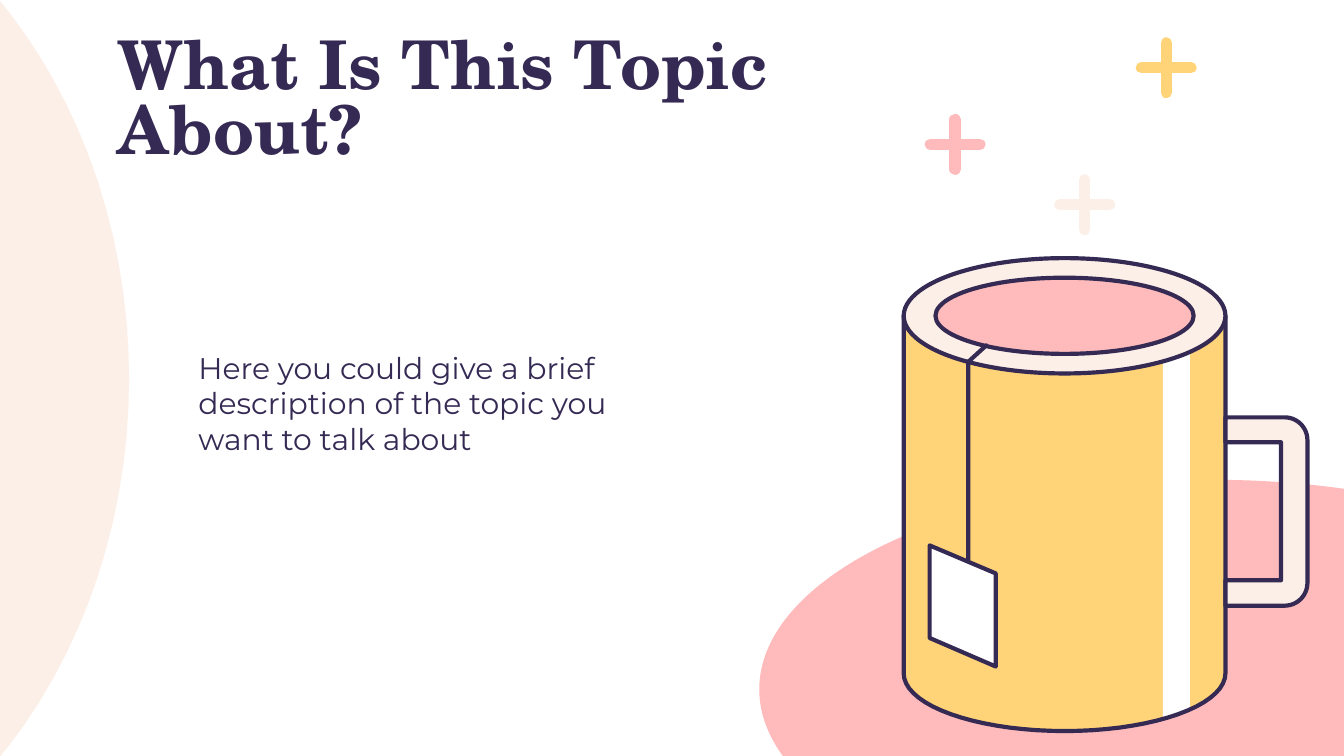
import math

from lxml import etree
from pptx import Presentation
from pptx import util as u
from pptx.dml.color import RGBColor
from pptx.enum import shapes, text
from pptx.oxml import ns

Cm = u.Cm
INK, CREAM, PINK, YELLOW, WHITE = "352A53", "FCEFE7", "FFBBBB", "FFD378", "FFFFFF"

# Lengths in cm
TITLE = ("What Is This Topic About?", (1.98, 1.14, 15.9, 1.6), "TeX Gyre Schola", 36, True)
BODY = ("Here you could give a brief description of the topic you want to talk about",
        (3.5, 6.35, 8.64, 2.69), "Montserrat", 16, False)
SPARKLES = [(18.05, 2.73, PINK), (20.5, 3.87, CREAM), (22.04, 1.28, YELLOW)]
SPARKLE_ARM = 0.47

MUG_X, MUG_RX, MUG_RY = 20.12, 3.04, 1.09
RIM_Y, BASE_Y = 5.97, 12.73
TEA_RX, TEA_RY = 2.44, 0.72
STRIPE = (21.98, 22.49)
HANDLE_RIGHT, HANDLE_TOP, HANDLE_BOTTOM, HANDLE_RADIUS = 24.71, 7.89, 11.45, 0.43
HOLE_RIGHT, HOLE_TOP, HOLE_BOTTOM = 24.21, 8.36, 10.97
STRING = [(18.3, 10.58), (18.3, 6.84), (18.64, 6.53)]
TAG = [(17.57, 10.31), (17.57, 12.06), (18.82, 12.6), (18.82, 10.84)]


def rgb(hex_color):
    return RGBColor.from_string(hex_color)


def round_ends(line):
    """Give a line round caps and joins."""
    ln = line._get_or_add_ln()
    ln.set("cap", "rnd")
    etree.SubElement(ln, ns.qn("a:round"))


def paint(sp, fill=None, line=None):
    sp.shadow.inherit = False
    if fill:
        sp.fill.solid()
        sp.fill.fore_color.rgb = rgb(fill)
    else:
        sp.fill.background()
    if line:
        sp.line.color.rgb = rgb(line)
        sp.line.width = u.Pt(2.25)
        round_ends(sp.line)
    else:
        sp.line.fill.background()


def arc(cx, cy, rx, ry, start, end, steps=36):
    """Points along an ellipse; angles in degrees, clockwise from the right."""
    angles = [math.radians(start + (end - start) * i / steps) for i in range(steps + 1)]
    return [(cx + rx * math.cos(a), cy + ry * math.sin(a)) for a in angles]


def outline(parent, points, fill=None, line=None, close=True):
    emu = [(Cm(x), Cm(y)) for x, y in points]
    builder = parent.build_freeform(*emu[0])
    builder.add_line_segments(emu[1:], close=close)
    paint(builder.convert_to_shape(), fill, line)


def ellipse(parent, cx, cy, rx, ry, fill, line=None):
    sp = parent.add_shape(shapes.MSO_SHAPE.OVAL, Cm(cx - rx), Cm(cy - ry), Cm(2 * rx), Cm(2 * ry))
    paint(sp, fill, line)


def sparkle(parent, x, y, color):
    g = parent.add_group_shape().shapes
    for dx, dy in [(0, SPARKLE_ARM), (SPARKLE_ARM, 0)]:
        c = g.add_connector(shapes.MSO_CONNECTOR.STRAIGHT,
                            Cm(x - dx), Cm(y - dy), Cm(x + dx), Cm(y + dy))
        c.line.color.rgb = rgb(color)
        c.line.width = u.Pt(6)
        round_ends(c.line)
        etree.SubElement(c._element.spPr, ns.qn("a:effectLst"))


def mug(parent):
    g = parent.add_group_shape().shapes
    left, right = MUG_X - MUG_RX, MUG_X + MUG_RX
    side = [(right, RIM_Y)] + arc(MUG_X, BASE_Y, MUG_RX, MUG_RY, 0, 180) + [(left, RIM_Y)]
    outline(g, side, YELLOW)
    start, end = [math.degrees(math.acos((x - MUG_X) / MUG_RX)) for x in STRIPE]
    stripe_base = arc(MUG_X, BASE_Y, MUG_RX, MUG_RY, start, end)
    outline(g, [(STRIPE[0], RIM_Y)] + stripe_base + [(STRIPE[1], RIM_Y)], WHITE)
    outline(g, side, line=INK)
    ellipse(g, MUG_X, RIM_Y, MUG_RX, MUG_RY, CREAM, INK)
    ellipse(g, MUG_X, RIM_Y, TEA_RX, TEA_RY, PINK, INK)

    r = HANDLE_RADIUS
    outer = (arc(HANDLE_RIGHT - r, HANDLE_TOP + r, r, r, -90, 0, 12)
             + arc(HANDLE_RIGHT - r, HANDLE_BOTTOM - r, r, r, 0, 90, 12))
    hole = [(right, HOLE_BOTTOM), (HOLE_RIGHT, HOLE_BOTTOM), (HOLE_RIGHT, HOLE_TOP), (right, HOLE_TOP)]
    outline(g, [(right, HANDLE_TOP)] + outer + [(right, HANDLE_BOTTOM)] + hole, CREAM, INK)

    outline(g, STRING, line=INK, close=False)
    outline(g, TAG, WHITE, INK)


def write(sp, content, anchor, spacing):
    words, box, font, size, bold = content
    sp.left, sp.top, sp.width, sp.height = [Cm(v) for v in box]
    tf = sp.text_frame
    tf.text = words
    tf.word_wrap = True
    tf.auto_size = text.MSO_AUTO_SIZE.NONE
    tf.vertical_anchor = anchor
    tf.margin_left = tf.margin_right = tf.margin_top = tf.margin_bottom = Cm(0.25)
    p = tf.paragraphs[0]
    p.alignment = text.PP_ALIGN.LEFT
    p.line_spacing = spacing
    p.space_before = u.Pt(0)
    pPr = p._p.get_or_add_pPr()
    pPr.set("marL", "0")
    pPr.set("indent", "0")
    etree.SubElement(pPr, ns.qn("a:buNone"))
    f = p.runs[0].font
    f.name, f.size, f.bold = font, u.Pt(size), bold
    f.color.rgb = rgb(INK)


def main():
    prs = Presentation()
    prs.slide_width, prs.slide_height = Cm(25.4), Cm(14.29)
    s = prs.slides.add_slide(prs.slide_layouts[1])
    write(s.shapes.title, TITLE, text.MSO_ANCHOR.MIDDLE, 0.8)
    write(s.placeholders[1], BODY, text.MSO_ANCHOR.TOP, 1.0)

    side_curve = arc(-6.08, 7.16, 8.52, 10.2, -55, 55)
    outline(s.shapes, [(-4.88, side_curve[0][1])] + side_curve + [(-4.88, side_curve[-1][1])], CREAM)
    ellipse(s.shapes, 22.92, 13.03, 8.57, 3.96, PINK)
    for x, y, color in SPARKLES:
        sparkle(s.shapes, x, y, color)
    mug(s.shapes)
    prs.save("out.pptx")


if __name__ == "__main__":
    main()
